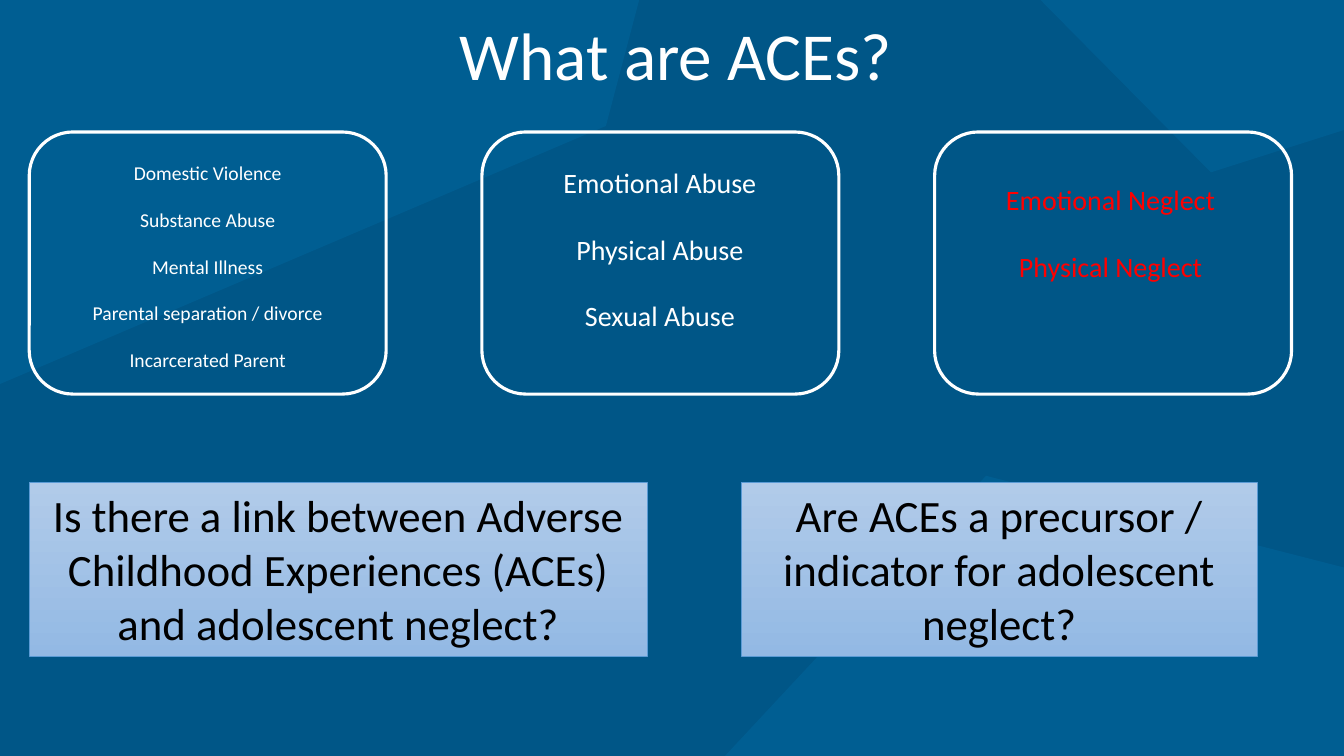
from pptx import Presentation
from pptx.dml.color import RGBColor
from pptx.enum.shapes import MSO_SHAPE
from pptx.enum.text import MSO_ANCHOR, PP_ALIGN
from pptx.util import Inches, Pt

WHITE = RGBColor(0xFF, 0xFF, 0xFF)
BLACK = RGBColor(0, 0, 0)
RED = RGBColor(0xFF, 0, 0)
DEEP = RGBColor(0x00, 0x56, 0x87)
BLUE = RGBColor(0x00, 0x5E, 0x92)
PALE = RGBColor(0xB1, 0xCB, 0xE9)
SKY = RGBColor(0x93, 0xB9, 0xE4)
EDGE = RGBColor(0x5B, 0x9B, 0xD5)

WIDE, HIGH = 13.33, 7.5
FACETS = [
    [(9.78, 4.72), (WIDE, 5.63), (WIDE, HIGH), (7.19, HIGH)],
    [(6.01, 1.25), (0, 3.81), (0, 0), (6.34, 0)],
    [(12.01, 1.71), (10.32, 0), (WIDE, 0), (WIDE, 1.29)],
]
TITLE = "What are ACEs?"
GROUPS = [
    (["Domestic Violence", "Substance Abuse", "Mental Illness",
      "Parental separation / divorce", "Incarcerated Parent"],
     (0.47, 1.55, 3.18, 2.22), 14, 16.5, WHITE),
    (["Emotional Abuse", "Physical Abuse", "Sexual Abuse"],
     (5.17, 1.59, 2.75, 1.78), 20, 23.7, WHITE),
    (["Emotional Neglect", "Physical Neglect"],
     (9.57, 1.76, 2.89, 1.11), 20, 23.7, RED),
]
ASKS = [
    ("Is there a link between Adverse Childhood Experiences (ACEs) "
     "and adolescent neglect?", 0.29, 6.13),
    ("Are ACEs a precursor / indicator for adolescent neglect?", 7.35, 5.12),
]
LEFT, STEP = 0.29, 4.49


def place(box):
    return [Inches(v) for v in box]


def write(frame, lines, size, color, gap=0):
    frame.word_wrap = True
    for i, line in enumerate(lines):
        para = frame.add_paragraph() if i else frame.paragraphs[0]
        para.alignment = PP_ALIGN.CENTER
        if i:
            para.space_before = Pt(gap)
        run = para.add_run()
        run.text = line
        run.font.name = "Calibri"
        run.font.size = Pt(size)
        run.font.color.rgb = color


deck = Presentation()
deck.slide_width, deck.slide_height = Inches(WIDE), Inches(HIGH)
slide = deck.slides.add_slide(deck.slide_layouts[6])
back = slide.background.fill
back.solid()
back.fore_color.rgb = DEEP
shapes = slide.shapes

for points in FACETS:
    start, *rest = [place(p) for p in points]
    pen = shapes.build_freeform(*start)
    pen.add_line_segments(rest, close=True)
    facet = pen.convert_to_shape()
    facet.shadow.inherit = False
    facet.fill.solid()
    facet.fill.fore_color.rgb = BLUE
    facet.line.fill.background()

head = shapes.add_textbox(*place((2.97, 0.22, 7.47, 0.55))).text_frame
head.margin_left = head.margin_right = head.margin_top = head.margin_bottom = 0
write(head, [TITLE], 48, WHITE)
head.paragraphs[0].line_spacing = 0.9

for i, (lines, box, size, gap, color) in enumerate(GROUPS):
    card = shapes.add_shape(MSO_SHAPE.ROUNDED_RECTANGLE,
                            *place((LEFT + i * STEP, 1.31, 3.54, 2.6)))
    card.shadow.inherit = False
    card.fill.background()
    card.line.color.rgb = WHITE
    card.line.width = Pt(2.25)
    write(shapes.add_textbox(*place(box)).text_frame, lines, size, color, gap)

for text, left, width in ASKS:
    panel = shapes.add_shape(MSO_SHAPE.RECTANGLE,
                             *place((left, 4.79, width, 1.72)))
    panel.shadow.inherit = False
    panel.fill.gradient()
    panel.fill.gradient_angle = 270
    for stop, color in zip(panel.fill.gradient_stops, (PALE, SKY)):
        stop.color.rgb = color
    panel.line.color.rgb = EDGE
    panel.line.width = Pt(0.5)
    panel.text_frame.vertical_anchor = MSO_ANCHOR.TOP
    write(panel.text_frame, [text], 32, BLACK)

deck.save("out.pptx")
